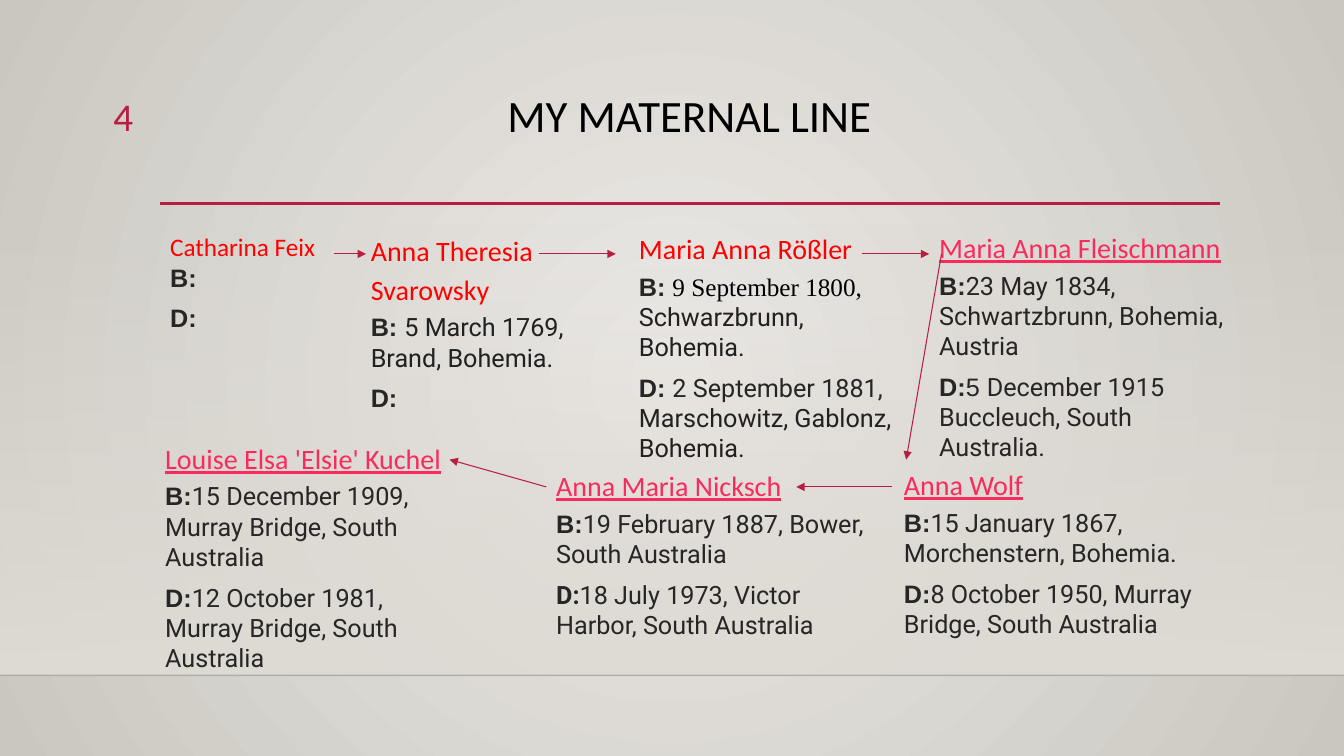
from lxml import etree
from pptx import Presentation
from pptx.dml.color import RGBColor
from pptx.enum import shapes, text
from pptx.oxml import ns
from pptx.util import Pt

CRIMSON = RGBColor(0xB7, 0x1E, 0x42)
PINK = RGBColor(0xFA, 0x2B, 0x5C)
RED = RGBColor(0xFF, 0, 0)
BLACK = RGBColor(0, 0, 0)
EDGE = RGBColor(0, 0, 1)
DARK = RGBColor(0x26, 0x26, 0x26)
INK = RGBColor(0x20, 0x21, 0x21)
WALL_LIGHT = RGBColor(0xEC, 0xEA, 0xE7)
WALL_DARK = RGBColor(0xCA, 0xC7, 0xC1)
FLOOR = RGBColor(0xDF, 0xDB, 0xD5)

HEADING = {"line_spacing": 1.15, "space_after": Pt(4)}
DEATH = {"space_before": Pt(7.5)}
LABEL = {"name": "Arial", "size": Pt(18), "bold": True, "color": DARK}
FACT = {"name": "Roboto", "size": Pt(18), "color": DARK}
PLACE = {**FACT, "color": INK}
SERIF = {**FACT, "name": "Times New Roman", "color": BLACK}
ARIAL_FACT = {**FACT, "name": "Arial"}
ROBOTO_LABEL = {**LABEL, "name": "Roboto"}
ANCESTOR = {"name": "Calibri", "size": Pt(20), "color": RED}
LINKED = {**ANCESTOR, "color": PINK, "underline": True}

# Box (left, top, width, height), then paragraphs of (format, spans).
PEOPLE = [
    ((114.5, 162, 123.8, 80.6), [
        ({}, [("Catharina Feix", {**ANCESTOR, "size": Pt(18)})]),
        ({}, [("B:", LABEL)]),
        (DEATH, [("D:", LABEL)])]),
    ((257.8, 159.8, 198.7, 140.4), [
        (HEADING, [("Anna Theresia Svarowsky", ANCESTOR)]),
        ({}, [("B: ", LABEL), ("5 March 1769, Brand, Bohemia.", PLACE)]),
        (DEATH, [("D:", LABEL)])]),
    ((449.3, 158.4, 198, 156.2), [
        (HEADING, [("Maria Anna Rößler", ANCESTOR)]),
        ({}, [("B: ", LABEL), ("9 September 1800, ", SERIF),
              ("Schwarzbrunn, Bohemia.", PLACE)]),
        (DEATH, [("D: ", LABEL), ("2 September 1881, ", FACT),
                 ("Marschowitz, Gablonz, Bohemia.", PLACE)])]),
    ((663.8, 157.7, 218.2, 156.2), [
        (HEADING, [("Maria Anna Fleischmann", LINKED)]),
        ({}, [("B:", LABEL),
              ("23 May 1834, Schwartzbrunn, Bohemia, Austria", FACT)]),
        (DEATH, [("D:", LABEL), ("5 ", ARIAL_FACT),
                 ("December 1915 Buccleuch, South Australia.", FACT)])]),
    ((638.6, 326.9, 229.7, 134.6), [
        (HEADING, [("Anna Wolf", LINKED)]),
        ({}, [("B:", LABEL), ("15 January 1867, ", FACT)]),
        ({}, [("Morchenstern, Bohemia.", FACT)]),
        (DEATH, [("D:", LABEL),
                 ("8 October 1950, Murray Bridge, South Australia", FACT)])]),
    ((390.2, 327.6, 239, 134.6), [
        (HEADING, [("Anna Maria Nicksch", LINKED)]),
        ({}, [("B:", LABEL),
              ("19 February 1887, Bower, South Australia", FACT)]),
        (DEATH, [("D:", ROBOTO_LABEL),
                 ("18 July 1973, Victor Harbor, South Australia", FACT)])]),
    ((110.9, 308.2, 217.4, 200.2), [
        (HEADING, [("Louise Elsa 'Elsie' Kuchel", LINKED)]),
        ({}, [("B:", LABEL),
              ("15 December 1909, Murray Bridge, South Australia", FACT)]),
        (DEATH, [("D:", LABEL),
                 ("12 October 1981, Murray Bridge, South Australia", FACT)])]),
]

# From (x, y) to (x, y), in order of descent.
DESCENT = [
    (238.3, 181.4, 261.4, 181.4),
    (385.2, 181.4, 439.9, 181.4),
    (615.6, 181.4, 663.8, 181.4),
    (672.5, 181.4, 647.3, 328.3),
    (637.2, 347.8, 568.8, 347.8),
    (390.2, 347.8, 321.1, 328.3),
]


def set_alpha(color_element, percent):
    etree.SubElement(color_element, ns.qn("a:alpha"), val=str(percent * 1000))


def set_gradient(fill, first, last):
    """Apply a two-stop linear gradient and return its XML element."""
    fill.gradient()
    for stop, color, position in zip(fill.gradient_stops, (first, last), (0, 1)):
        stop.color.rgb = color
        stop.position = position
    return fill._fill._gradFill


def paint_background(page):
    gradient = set_gradient(page.background.fill, WALL_LIGHT, WALL_DARK)
    linear = gradient.find(ns.qn("a:lin"))
    radial = etree.Element(ns.qn("a:path"), {"path": "circle"})
    etree.SubElement(radial, ns.qn("a:fillToRect"),
                     dict.fromkeys("ltrb", "50000"))
    gradient.replace(linear, radial)


def add_floor(page):
    """Add the band that fades in from the top down to the floor edge."""
    band = page.shapes.add_shape(shapes.MSO_SHAPE.RECTANGLE,
                                 0, Pt(159.1), Pt(960), Pt(323.3))
    band.shadow.inherit = False
    band.line.fill.background()
    gradient = set_gradient(band.fill, FLOOR, FLOOR)
    band.fill.gradient_angle = 270
    set_alpha(gradient.find(".//" + ns.qn("a:srgbClr")), 0)


def add_line(page, ends, color, width):
    line = page.shapes.add_connector(shapes.MSO_CONNECTOR.STRAIGHT,
                                     *(Pt(value) for value in ends))
    line.line.color.rgb = color
    line.line.width = Pt(width)
    etree.SubElement(line._element.spPr, ns.qn("a:effectLst"))
    return line


def add_arrow(page, ends):
    arrow = add_line(page, ends, CRIMSON, 0.75)
    etree.SubElement(arrow.line._get_or_add_ln(), ns.qn("a:tailEnd"),
                     type="triangle")


def add_text(page, place, paragraphs, grow=False):
    box = page.shapes.add_textbox(*(Pt(value) for value in place))
    frame = box.text_frame
    frame.word_wrap = True
    if grow:
        frame.auto_size = text.MSO_AUTO_SIZE.SHAPE_TO_FIT_TEXT
    for index, (layout, spans) in enumerate(paragraphs):
        para = frame.add_paragraph() if index else frame.paragraphs[0]
        for key, value in layout.items():
            setattr(para, key, value)
        for words, style in spans:
            span = para.add_run()
            span.text = words
            for key, value in style.items():
                if key == "color":
                    span.font.color.rgb = value
                else:
                    setattr(span.font, key, value)


def main():
    deck = Presentation()
    deck.slide_width, deck.slide_height = Pt(960), Pt(540)
    page = deck.slides.add_slide(deck.slide_layouts[6])

    paint_background(page)
    add_floor(page)
    floor_edge = add_line(page, (0, 482.4, 960, 482.4), EDGE, 1)
    set_alpha(floor_edge._element.spPr.find(".//" + ns.qn("a:srgbClr")), 20)
    add_line(page, (114.5, 145.4, 871.2, 145.4), CRIMSON, 2.5)

    title = {"name": "Calibri", "size": Pt(32), "color": BLACK}
    add_text(page, (114.5, 63.4, 756, 82.8),
             [({"alignment": text.PP_ALIGN.CENTER, "line_spacing": 0.9},
               [("MY MATERNAL LINE", title)])])
    number = {"name": "Calibri", "size": Pt(28), "color": CRIMSON}
    add_text(page, (38.2, 62.6, 64.1, 39.6),
             [({"alignment": text.PP_ALIGN.RIGHT}, [("4", number)])])

    for place, paragraphs in PEOPLE:
        add_text(page, place, paragraphs, grow=True)
    for ends in DESCENT:
        add_arrow(page, ends)

    deck.save("out.pptx")


if __name__ == "__main__":
    main()
